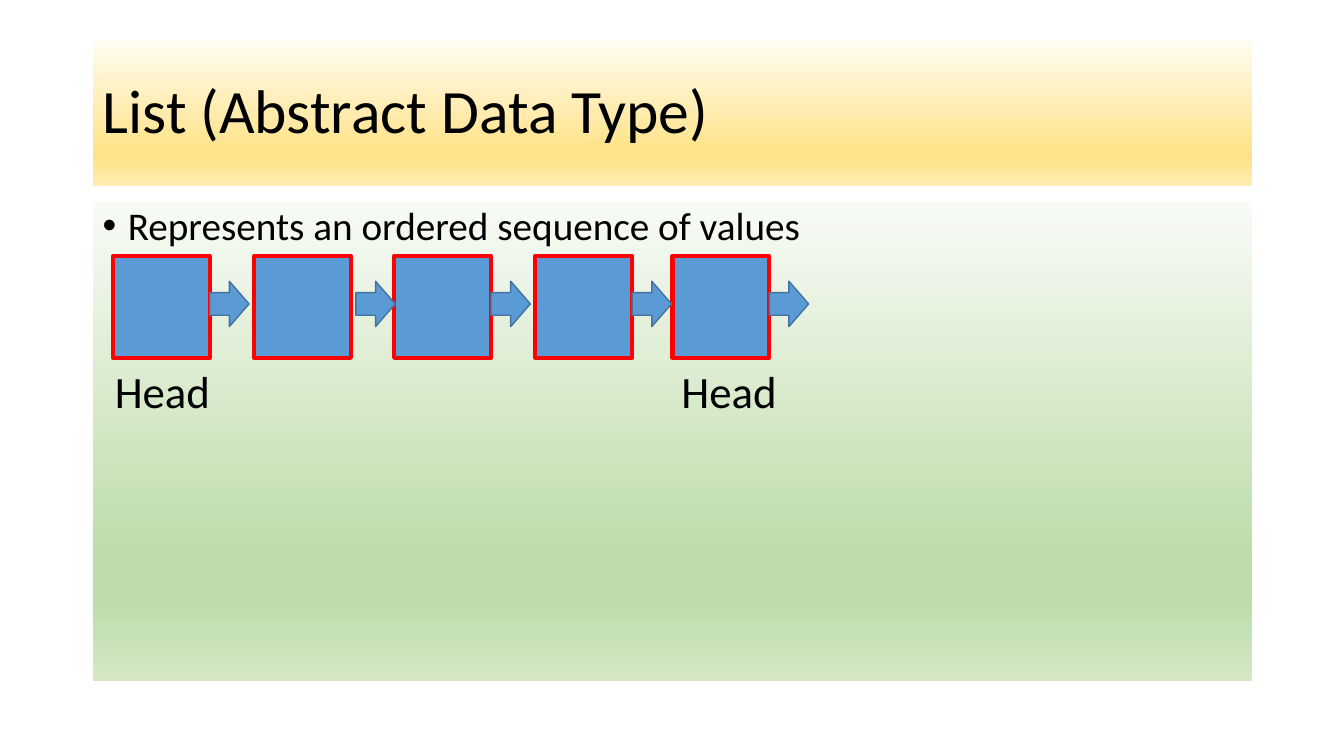
from lxml import etree
from pptx import Presentation
from pptx.dml.color import RGBColor
from pptx.enum.shapes import MSO_SHAPE
from pptx.enum.text import MSO_ANCHOR, MSO_AUTO_SIZE, PP_ALIGN
from pptx.oxml.ns import qn
from pptx.util import Inches, Pt

BLACK = RGBColor(0x00, 0x00, 0x00)
NODE_BLUE = RGBColor(0x5B, 0x9B, 0xD5)
NODE_BORDER = RGBColor(0xFF, 0x00, 0x00)
ARROW_BORDER = RGBColor(0x43, 0x73, 0x9E)
GOLD_STOPS = [
    (0, RGBColor(0xFF, 0xFC, 0xF2)),
    (74, RGBColor(0xFF, 0xE3, 0x8C)),
    (83, RGBColor(0xFF, 0xE3, 0x8C)),
    (100, RGBColor(0xFF, 0xEC, 0xB2)),
]
GREEN_STOPS = [
    (0, RGBColor(0xF8, 0xFB, 0xF6)),
    (74, RGBColor(0xBE, 0xDC, 0xAA)),
    (83, RGBColor(0xBE, 0xDC, 0xAA)),
    (100, RGBColor(0xD4, 0xE8, 0xC6)),
]

NODE_WIDTH = 0.96
# Left edge of each list node and of the arrow that follows it
CHAIN = [(1.12, 2.08), (2.52, 3.53), (3.91, 4.87), (5.31, 6.27), (6.67, 7.63)]


def add_plain_shape(slide, kind, left, top, width, height):
    shape = slide.shapes.add_shape(
        kind, Inches(left), Inches(top), Inches(width), Inches(height))
    shape.shadow.inherit = False
    return shape


def write_text(paragraph, text, size):
    paragraph.alignment = PP_ALIGN.LEFT
    run = paragraph.add_run()
    run.text = text
    run.font.name = "Calibri"
    run.font.size = Pt(size)
    run.font.color.rgb = BLACK


def fill_downward_gradient(shape, stops):
    shape.fill.gradient()
    shape.fill.gradient_angle = 270
    stop_list = shape.fill._fill._gradFill.find(qn("a:gsLst"))
    for old_stop in list(stop_list):
        stop_list.remove(old_stop)
    for percent, color in stops:
        stop = etree.SubElement(stop_list, qn("a:gs"), pos=str(percent * 1000))
        etree.SubElement(stop, qn("a:srgbClr"), val=str(color))


def add_panel(slide, top, height, stops, anchor, text, size):
    panel = add_plain_shape(slide, MSO_SHAPE.RECTANGLE, 0.92, top, 11.5, height)
    fill_downward_gradient(panel, stops)
    panel.line.fill.background()
    panel.text_frame.word_wrap = True
    panel.text_frame.vertical_anchor = anchor
    paragraph = panel.text_frame.paragraphs[0]
    paragraph.line_spacing = 0.9
    write_text(paragraph, text, size)
    return paragraph


def add_bullet(paragraph):
    paragraph.space_before = Pt(10)
    properties = paragraph._p.get_or_add_pPr()
    properties.set("marL", str(Inches(0.25)))
    properties.set("indent", str(Inches(-0.25)))
    etree.SubElement(properties, qn("a:buFont"), typeface="Arial")
    etree.SubElement(properties, qn("a:buChar"), char="•")


def add_chain_part(slide, kind, left, top, width, height, border, border_width):
    part = add_plain_shape(slide, kind, left, top, width, height)
    part.fill.solid()
    part.fill.fore_color.rgb = NODE_BLUE
    part.line.color.rgb = border
    part.line.width = Pt(border_width)


def add_label(slide, left, text):
    label = slide.shapes.add_textbox(
        Inches(left), Inches(3.56), Inches(1.16), Inches(0.64))
    label.text_frame.word_wrap = False
    label.text_frame.auto_size = MSO_AUTO_SIZE.SHAPE_TO_FIT_TEXT
    write_text(label.text_frame.paragraphs[0], text, 32)


def main():
    presentation = Presentation()
    presentation.slide_width = Inches(13.33)
    presentation.slide_height = Inches(7.5)
    slide = presentation.slides.add_slide(presentation.slide_layouts[6])

    # Title and definition
    add_panel(slide, 0.4, 1.45, GOLD_STOPS, MSO_ANCHOR.MIDDLE,
              "List (Abstract Data Type)", 44)
    definition = add_panel(slide, 2, 4.76, GREEN_STOPS, MSO_ANCHOR.TOP,
                           "Represents an ordered sequence of values", 28)
    add_bullet(definition)

    # Linked nodes, with the arrows in front
    for node_left, _ in CHAIN:
        add_chain_part(slide, MSO_SHAPE.RECTANGLE, node_left, 2.54,
                       NODE_WIDTH, 1.01, NODE_BORDER, 3)
    for _, arrow_left in CHAIN:
        add_chain_part(slide, MSO_SHAPE.RIGHT_ARROW, arrow_left, 2.79,
                       0.39, 0.45, ARROW_BORDER, 1)

    # Labels under the first and last nodes
    for label_left in (1.04, 6.66):
        add_label(slide, label_left, "Head")

    presentation.save("out.pptx")


if __name__ == "__main__":
    main()
